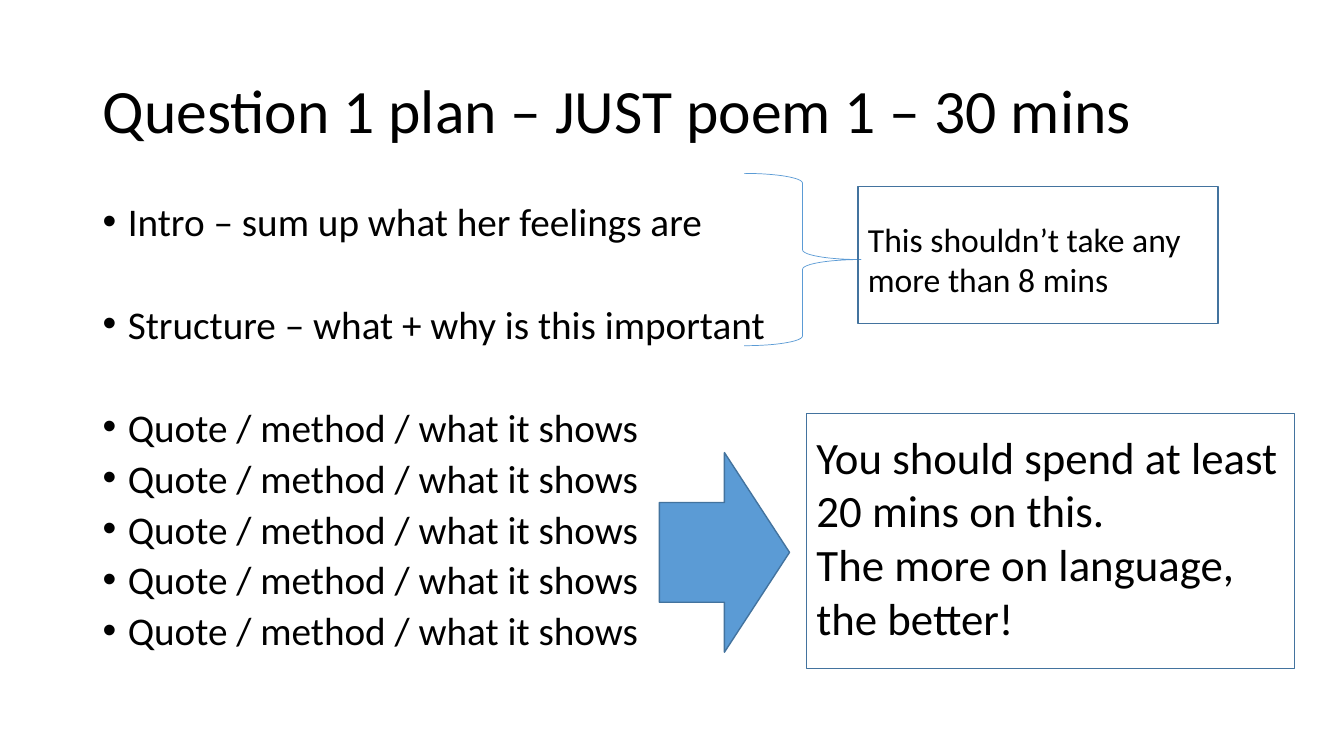
from lxml import etree
from pptx import Presentation
from pptx import util as u
from pptx.dml.color import RGBColor
from pptx.enum import shapes, text
from pptx.oxml.ns import qn

COLORS = {"ink": "000000", "blue": "5B9BD5", "outline": "43739E"}
FONT = "Calibri"
PLAN_POINTS = [
    "Intro – sum up what her feelings are",
    "Structure – what + why is this important",
] + ["Quote / method / what it shows"] * 5
SECTION_STARTS = (1, 2)  # points set apart from the one above


def add_text(slide, box, lines, size, anchor=text.MSO_ANCHOR.TOP, line_spacing=1.0):
    """Add a text box with one paragraph per line and return its paragraphs."""
    frame = slide.shapes.add_textbox(*map(u.Inches, box)).text_frame
    frame.word_wrap = True
    frame.vertical_anchor = anchor
    frame.text = "\n".join(lines)
    for paragraph in frame.paragraphs:
        paragraph.line_spacing = line_spacing
        font = paragraph.runs[0].font
        font.name, font.size = FONT, u.Pt(size)
        font.color.rgb = RGBColor.from_string(COLORS["ink"])
    return frame.paragraphs


def add_bullet(paragraph):
    """Give a paragraph a hanging round bullet."""
    props = paragraph._p.get_or_add_pPr()
    props.set("marL", str(u.Inches(0.25)))
    props.set("indent", str(u.Inches(-0.25)))
    etree.SubElement(props, qn("a:buFont"), typeface="Arial")
    etree.SubElement(props, qn("a:buChar"), char="•")


def add_outline(slide, kind, box, line="outline", width=1, fill=None):
    """Add a preset shape, unfilled unless a fill is named."""
    shape = slide.shapes.add_shape(kind, *map(u.Inches, box))
    shape.shadow.inherit = False
    if fill:
        shape.fill.solid()
        shape.fill.fore_color.rgb = RGBColor.from_string(COLORS[fill])
    else:
        shape.fill.background()
    shape.line.color.rgb = RGBColor.from_string(COLORS[line])
    shape.line.width = u.Pt(width)


def add_plan(slide):
    """Add the bulleted plan, with wider gaps between its sections."""
    points = add_text(slide, (0.92, 2, 11.5, 4.76), PLAN_POINTS, 28, line_spacing=0.8)
    for index, point in enumerate(points):
        point.space_before = u.Pt(46.5 if index in SECTION_STARTS else 9.5)
        add_bullet(point)


def main():
    deck = Presentation()
    deck.slide_width, deck.slide_height = u.Inches(13.33), u.Inches(7.5)
    slide = deck.slides.add_slide(deck.slide_layouts[6])
    preset = shapes.MSO_SHAPE

    # Title and plan
    add_text(slide, (0.92, 0.4, 11.5, 1.45), ["Question 1 plan – JUST poem 1 – 30 mins"],
             44, anchor=text.MSO_ANCHOR.MIDDLE, line_spacing=0.9)
    add_plan(slide)

    # Timing advice
    add_text(slide, (8.51, 2.12, 3.46, 0.91),
             ["This shouldn’t take any more than 8 mins"], 24)
    add_text(slide, (8, 4.21, 4.84, 2.26),
             ["You should spend at least 20 mins on this.",
              "The more on language, the better!"], 32)

    # Brace, advice frames and arrow
    add_outline(slide, preset.RIGHT_BRACE, (7.38, 1.72, 1.16, 1.71), line="blue", width=0.5)
    add_outline(slide, preset.RECTANGLE, (8.51, 1.85, 3.57, 1.36))
    add_outline(slide, preset.RECTANGLE, (8, 4.1, 4.84, 2.53))
    add_outline(slide, preset.RIGHT_ARROW, (6.54, 4.49, 1.29, 1.98), fill="blue")

    deck.save("out.pptx")


if __name__ == "__main__":
    main()
